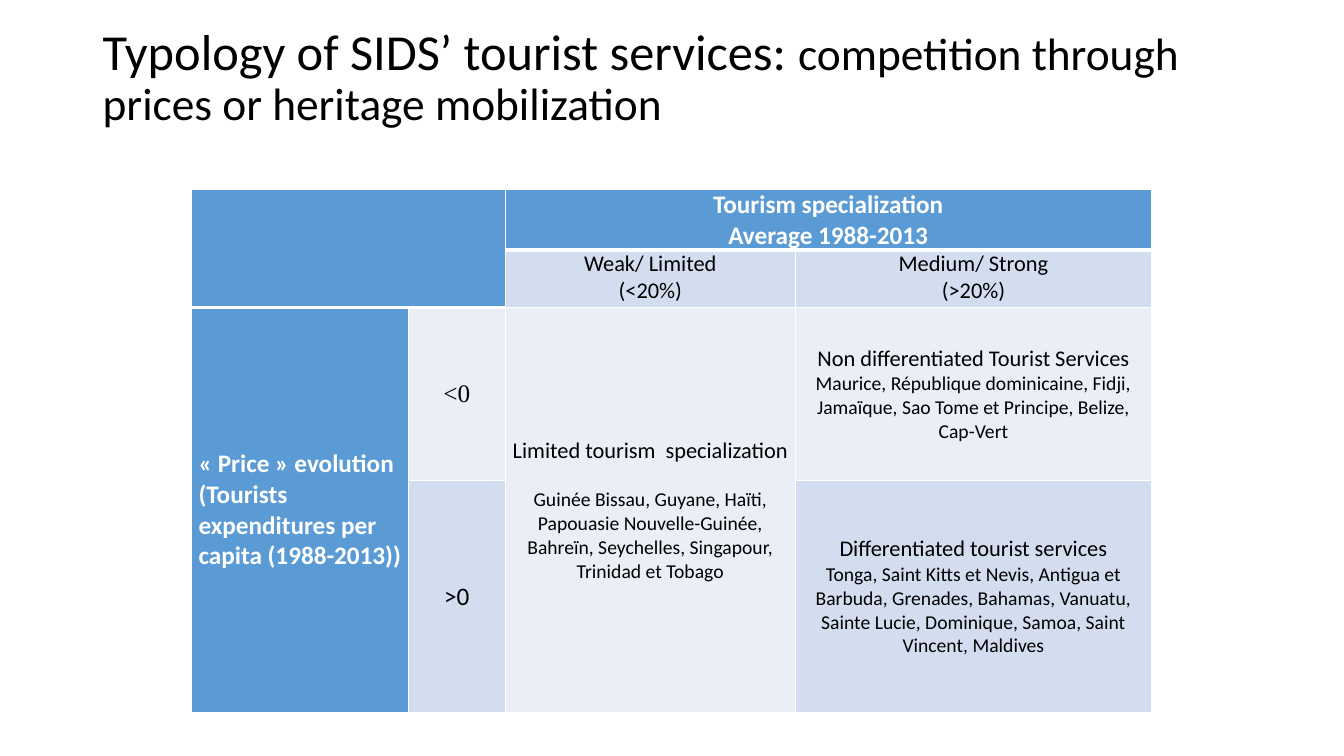
"""Build a slide with a table of the types of tourist services in SIDS."""
import pptx
import pptx.util
import pptx.dml.color
import pptx.enum.text
import lxml.etree

Inches = pptx.util.Inches
Pt = pptx.util.Pt
RGBColor = pptx.dml.color.RGBColor
ALIGN = pptx.enum.text.PP_ALIGN
ANCHOR = pptx.enum.text.MSO_ANCHOR

WHITE = RGBColor(0xFF, 0xFF, 0xFF)
BLACK = RGBColor(0x00, 0x00, 0x00)
BLUE = RGBColor(0x5B, 0x9B, 0xD5)
MID = RGBColor(0xD2, 0xDE, 0xEF)
PALE = RGBColor(0xEA, 0xEF, 0xF7)
NS = "{http://schemas.openxmlformats.org/drawingml/2006/main}"


def style(font, size, color, name="Calibri", bold=False):
    font.size = Pt(size)
    font.color.rgb = color
    font.name = name
    font.bold = bold


def border(cell, side, width):
    line = lxml.etree.SubElement(cell._tc.get_or_add_tcPr(), NS + "ln" + side, w=str(Pt(width)))
    fill = lxml.etree.SubElement(line, NS + "solidFill")
    lxml.etree.SubElement(fill, NS + "srgbClr", val=str(WHITE))


deck = pptx.Presentation()
deck.slide_width = Inches(13.33)
deck.slide_height = Inches(7.5)
slide = deck.slides.add_slide(deck.slide_layouts[6])

title = slide.shapes.add_textbox(Inches(0.92), Inches(0.22), Inches(11.5), Inches(1.15))
title.text_frame.word_wrap = True
para = title.text_frame.paragraphs[0]
para.line_spacing = 0.9
for text, size in [
    ("Typology of SIDS’ tourist services: ", 36),
    ("competition through prices or heritage mobilization", 32.4),
]:
    run = para.add_run()
    run.text = text
    style(run.font, size, BLACK)

widths = [2.15, 0.96, 2.88, 3.53]
heights = [0.6, 0.57, 1.72, 2.3]
table = slide.shapes.add_table(
    4, 4, Inches(1.9), Inches(1.88), Inches(sum(widths)), Inches(sum(heights))
).table
for col, width in zip(table.columns, widths):
    col.width = Inches(width)
for row, height in zip(table.rows, heights):
    row.height = Inches(height)

fills = [
    [BLUE, BLUE, BLUE, BLUE],
    [BLUE, BLUE, MID, MID],
    [BLUE, PALE, PALE, PALE],
    [BLUE, MID, PALE, MID],
]
for r, shades in enumerate(fills):
    for c, shade in enumerate(shades):
        cell = table.cell(r, c)
        head = 1 if c < 2 else 0
        border(cell, "L", 1)
        border(cell, "R", 1)
        border(cell, "T", 3 if r == head + 1 else 1)
        border(cell, "B", 3 if r == head else 1)
        cell.fill.solid()
        cell.fill.fore_color.rgb = shade
        cell.margin_left = cell.margin_right = Inches(0.07)
        cell.margin_top = cell.margin_bottom = 0
        cell.vertical_anchor = ANCHOR.TOP if r < 2 else ANCHOR.MIDDLE

for top, left, low, right in [(0, 0, 1, 1), (0, 2, 0, 3), (2, 0, 3, 0), (2, 2, 3, 2)]:
    table.cell(top, left).merge(table.cell(low, right))

texts = {
    (0, 2): [("Tourism specialization", 18), ("Average 1988-2013", 18)],
    (1, 2): [("Weak/ Limited", 16), ("(<20%)", 16)],
    (1, 3): [("Medium/ Strong", 16), ("(>20%)", 16)],
    (2, 0): [
        ("« Price » evolution", 18),
        ("(Tourists expenditures per capita (1988-2013))", 18),
    ],
    (2, 1): [("<0", 18)],
    (2, 2): [
        ("Limited tourism  specialization", 16),
        ("Guinée Bissau, Guyane, Haïti, Papouasie Nouvelle-Guinée, "
         "Bahreïn, Seychelles, Singapour, Trinidad et Tobago", 14),
    ],
    (2, 3): [
        ("Non differentiated Tourist Services", 16),
        ("Maurice, République dominicaine, Fidji, Jamaïque, "
         "Sao Tome et Principe, Belize, Cap-Vert", 14),
    ],
    (3, 1): [(">0", 18)],
    (3, 3): [
        ("Differentiated tourist services", 16),
        ("Tonga, Saint Kitts et Nevis, Antigua et Barbuda, Grenades, "
         "Bahamas, Vanuatu, Sainte Lucie, Dominique, Samoa, "
         "Saint Vincent, Maldives", 14),
    ],
}
for (r, c), lines in texts.items():
    frame = table.cell(r, c).text_frame
    head = fills[r][c] == BLUE
    for i, (text, size) in enumerate(lines):
        para = frame.add_paragraph() if i else frame.paragraphs[0]
        para.text = text
        para.alignment = ALIGN.LEFT if c == 0 else ALIGN.CENTER
        name = "Times New Roman" if text == "<0" else "Calibri"
        style(para.font, size, WHITE if head else BLACK, name, head)
table.cell(2, 2).text_frame.paragraphs[1].space_before = Pt(17)

deck.save("out.pptx")
